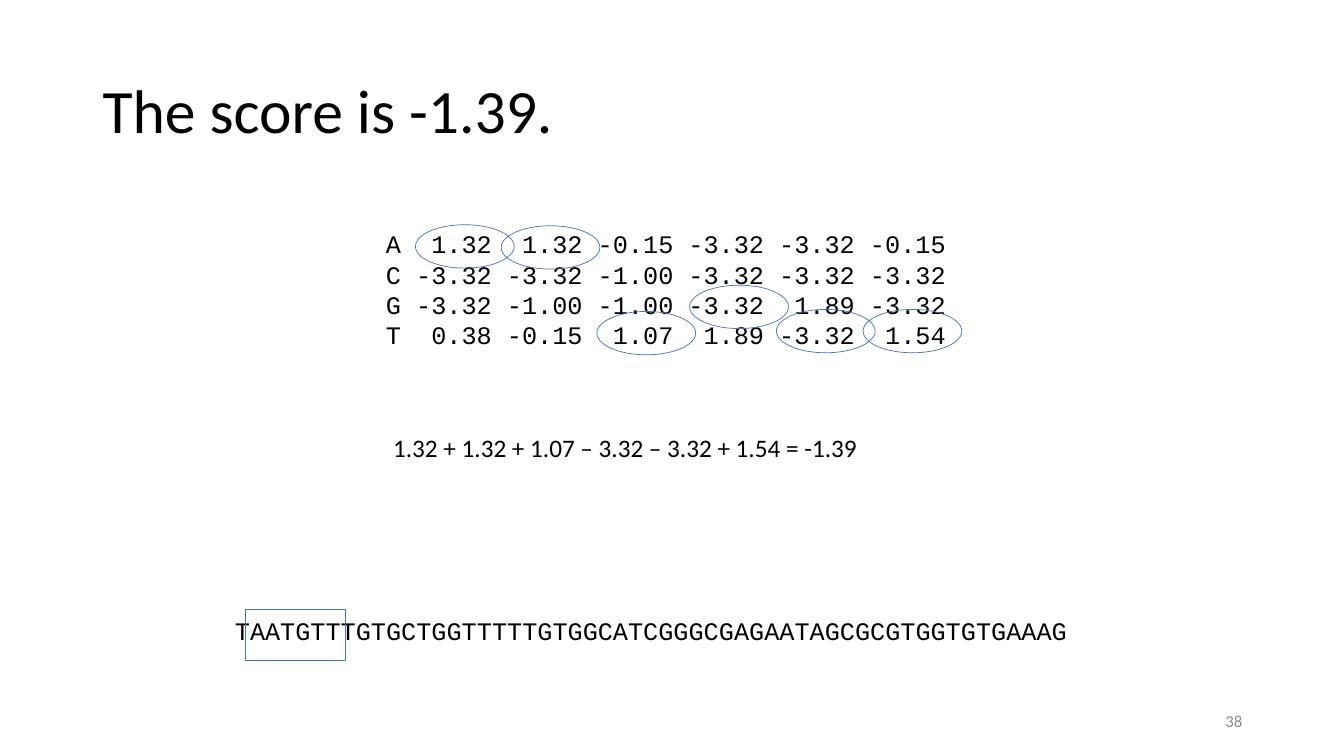
from pptx import Presentation
from pptx.dml.color import RGBColor
from pptx.enum.shapes import MSO_SHAPE
from pptx.enum.text import MSO_ANCHOR, PP_ALIGN
from pptx.util import Inches, Pt

RECT, OVAL = MSO_SHAPE.RECTANGLE, MSO_SHAPE.OVAL
TOP, MIDDLE = MSO_ANCHOR.TOP, MSO_ANCHOR.MIDDLE
LEFT, RIGHT = PP_ALIGN.LEFT, PP_ALIGN.RIGHT
BLACK = RGBColor(0x00, 0x00, 0x00)
GREY = RGBColor(0x8C, 0x8C, 0x8C)
BLUE = RGBColor(0x44, 0x72, 0xC4)
SANS, MONO = "Calibri", "Courier New"

# Content
TITLE = "The score is -1.39."
MATRIX = [
    "A  1.32  1.32 -0.15 -3.32 -3.32 -0.15",
    "C -3.32 -3.32 -1.00 -3.32 -3.32 -3.32",
    "G -3.32 -1.00 -1.00 -3.32  1.89 -3.32",
    "T  0.38 -0.15  1.07  1.89 -3.32  1.54",
]
SUM = "1.32 + 1.32 + 1.07 – 3.32 – 3.32 + 1.54 = -1.39"
SEQUENCE = "TAATGTTTGTGCTGGTTTTTGTGGCATCGGGCGAGAATAGCGCGTGGTGTGAAAG"
NUMBER = "38"

# Layout in inches: the ovals mark one score per matrix column
WIDE, HIGH = 13.33, 7.5
SEQ_LEFT, SEQ_TOP = 2.17, 6.05
OVAL_SIZE = (0.98, 0.43)
OVALS = [(4.12, 2.23), (4.97, 2.24), (5.92, 3.09),
         (6.84, 2.83), (7.7, 3.07), (8.56, 3.07)]


def add_text(slide, box, lines, size=18, font=SANS, color=BLACK,
             anchor=TOP, align=LEFT, wrap=False, inset=0.1, spacing=1.0):
    frame = slide.shapes.add_textbox(*map(Inches, box)).text_frame
    frame.word_wrap = wrap
    frame.vertical_anchor = anchor
    frame.margin_left = Inches(inset)
    for i, line in enumerate(lines):
        para = frame.add_paragraph() if i else frame.paragraphs[0]
        para.alignment = align
        para.line_spacing = spacing
        run = para.add_run()
        run.text = line
        run.font.size = Pt(size)
        run.font.name = font
        run.font.color.rgb = color


def add_mark(shapes, kind, box):
    mark = shapes.add_shape(kind, *map(Inches, box))
    mark.shadow.inherit = False
    mark.fill.background()
    mark.line.color.rgb = BLUE
    mark.line.width = Pt(0.5)


def main():
    deck = Presentation()
    deck.slide_width, deck.slide_height = Inches(WIDE), Inches(HIGH)
    slide = deck.slides.add_slide(deck.slide_layouts[6])

    # Title and score matrix
    add_text(slide, (0.92, 0.4, 11.5, 1.45), [TITLE], size=44,
             anchor=MIDDLE, wrap=True, spacing=0.9)
    add_text(slide, (3.73, 2.22, 5.81, 1.31), MATRIX, font=MONO)

    # Sequence with its scored window
    add_text(slide, (SEQ_LEFT, SEQ_TOP, 8.54, 0.71), [SEQUENCE],
             font=MONO, inset=0.16)
    add_mark(slide.shapes, RECT, (SEQ_LEFT + 0.26, SEQ_TOP, 1, 0.5))

    # Picked scores and their sum
    group = slide.shapes.add_group_shape()
    for spot in OVALS:
        add_mark(group.shapes, OVAL, spot + OVAL_SIZE)
    add_text(slide, (3.8, 4.24, 4.85, 0.4), [SUM])

    # Slide number
    add_text(slide, (9.42, 6.95, 3, 0.4), [NUMBER], size=12, color=GREY,
             anchor=MIDDLE, align=RIGHT, wrap=True)
    deck.save("out.pptx")


if __name__ == "__main__":
    main()
